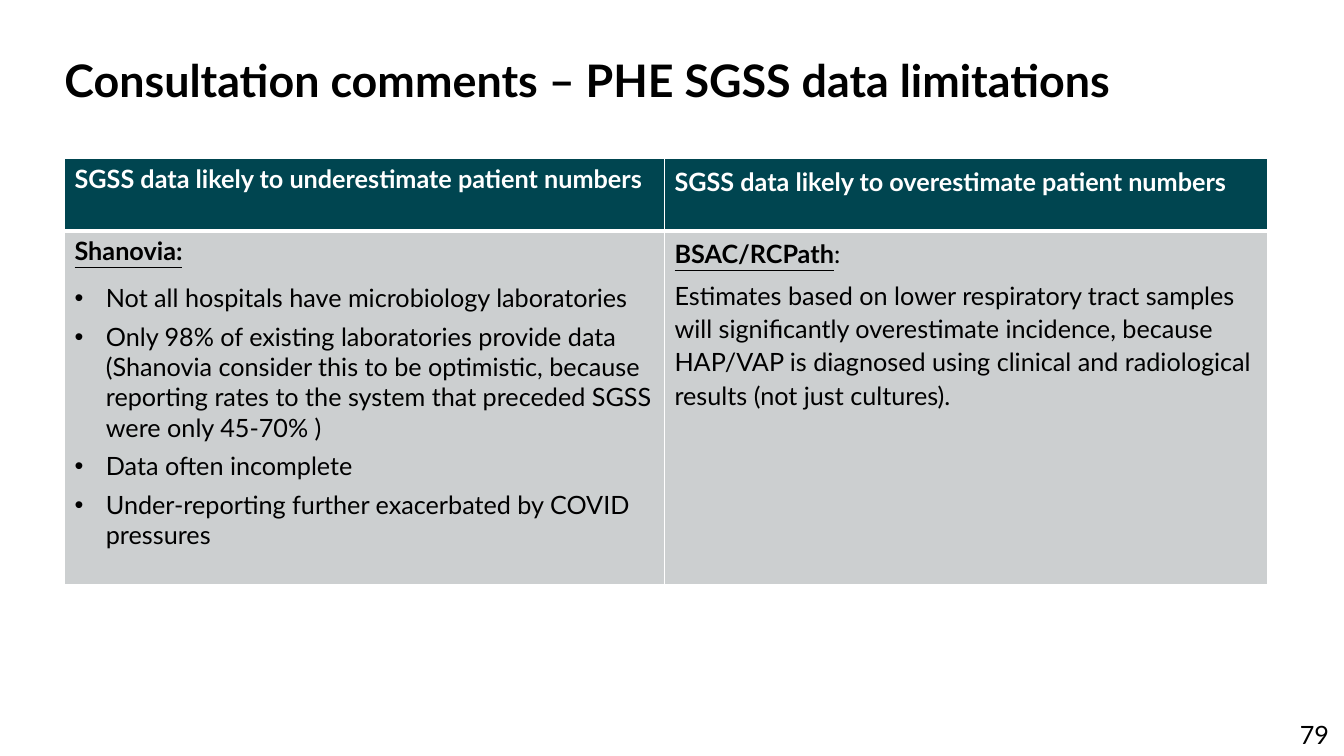
from lxml.etree import SubElement
from pptx import Presentation
from pptx.dml.color import RGBColor
from pptx.enum.text import PP_ALIGN
from pptx.oxml.ns import qn
from pptx.util import Inches, Pt

COLOURS = {"header": "004550", "body": "CCCFD0", "white": "FFFFFF", "black": "000000"}
FONT = "Lato"

# Paragraph formats
TIGHT = {"space_before": Pt(6), "space_after": Pt(6)}
LOOSE = {"line_spacing": 1.1, "space_after": Pt(6)}
BULLET = {"space_before": Pt(6)}

# Run formats
PLAIN = {}
BOLD = {"bold": True}
HEADING = {"bold": True, "underline": True}

# Cell contents: paragraphs of (format, runs, bulleted)
HEADER_ROW = [
    [(TIGHT, [("SGSS data likely to underestimate patient numbers", BOLD)], False)],
    [(LOOSE, [("SGSS data likely to overestimate patient numbers", BOLD)], False)],
]
UNDERESTIMATE_REASONS = [
    "Not all hospitals have microbiology laboratories",
    "Only 98% of existing laboratories provide data (Shanovia consider this to be "
    "optimistic, because reporting rates to the system that preceded SGSS were only 45-70% )",
    "Data often incomplete",
    "Under-reporting further exacerbated by COVID pressures",
]
OVERESTIMATE_REASON = (
    "Estimates based on lower respiratory tract samples will significantly overestimate "
    "incidence, because HAP/VAP is diagnosed using clinical and radiological results "
    "(not just cultures)."
)
BODY_ROW = [
    [(TIGHT, [("Shanovia:", HEADING)], False)]
    + [(BULLET, [(reason, PLAIN)], True) for reason in UNDERESTIMATE_REASONS],
    [
        (LOOSE, [("BSAC/RCPath", HEADING), (":", PLAIN)], False),
        (LOOSE, [(OVERESTIMATE_REASON, PLAIN)], False),
    ],
]


def apply_format(target, values):
    for attribute, value in values.items():
        setattr(target, attribute, value)


def add_run(paragraph, text, size, colour, values):
    run = paragraph.add_run()
    run.text = text
    apply_format(run.font, {"name": FONT, "size": Pt(size), **values})
    run.font.color.rgb = RGBColor.from_string(COLOURS[colour])


def add_bullet(paragraph):
    properties = paragraph._p.get_or_add_pPr()
    properties.set("marL", str(Inches(0.31)))
    properties.set("indent", str(Inches(-0.31)))
    SubElement(properties, qn("a:buFont"), typeface="Arial")
    SubElement(properties, qn("a:buChar"), char="•")


def add_text(slide, text, box, size, values, paragraph_values):
    frame = slide.shapes.add_textbox(*map(Inches, box)).text_frame
    frame.word_wrap = True
    paragraph = frame.paragraphs[0]
    apply_format(paragraph, paragraph_values)
    add_run(paragraph, text, size, "black", values)


def set_borders(cell, widths):
    properties = cell._tc.get_or_add_tcPr()
    for side, width in widths.items():
        border = SubElement(properties, qn(f"a:ln{side}"), w=str(Pt(width)))
        fill = SubElement(border, qn("a:solidFill"))
        SubElement(fill, qn("a:srgbClr"), val=COLOURS["white"])


def fill_cell(cell, paragraphs, fill, text_colour, borders):
    set_borders(cell, borders)
    cell.fill.solid()
    cell.fill.fore_color.rgb = RGBColor.from_string(COLOURS[fill])
    frame = cell.text_frame
    for index, (values, runs, bulleted) in enumerate(paragraphs):
        paragraph = frame.add_paragraph() if index else frame.paragraphs[0]
        apply_format(paragraph, values)
        if bulleted:
            add_bullet(paragraph)
        for text, run_values in runs:
            add_run(paragraph, text, 18, text_colour, run_values)


def add_comments_table(slide):
    box = map(Inches, (0.64, 1.57, 11.93, 4.23))
    comments = slide.shapes.add_table(2, 2, *box).table
    for column, width in zip(comments.columns, (5.95, 5.98)):
        column.width = Inches(width)
    for row, height in zip(comments.rows, (0.72, 3.51)):
        row.height = Inches(height)

    rows = [
        (HEADER_ROW, "header", "white", {"L": 1, "R": 1, "T": 1, "B": 3}),
        (BODY_ROW, "body", "black", {"L": 1, "R": 1, "T": 3, "B": 1}),
    ]
    for row, (contents, fill, text_colour, borders) in zip(comments.rows, rows):
        for cell, paragraphs in zip(row.cells, contents):
            fill_cell(cell, paragraphs, fill, text_colour, borders)


def main():
    deck = Presentation()
    deck.slide_width, deck.slide_height = Inches(13.33), Inches(7.5)
    slide = deck.slides.add_slide(deck.slide_layouts[6])

    # Page number
    add_text(slide, "79", (11.44, 7.09, 1.84, 0.4), 18, PLAIN, {"alignment": PP_ALIGN.RIGHT})
    # Title
    add_text(slide, "Consultation comments – PHE SGSS data limitations",
             (0.54, 0.53, 12.22, 1.4), 32, BOLD, {"line_spacing": 0.9})
    # Consultation comments
    add_comments_table(slide)

    deck.save("out.pptx")


if __name__ == "__main__":
    main()
